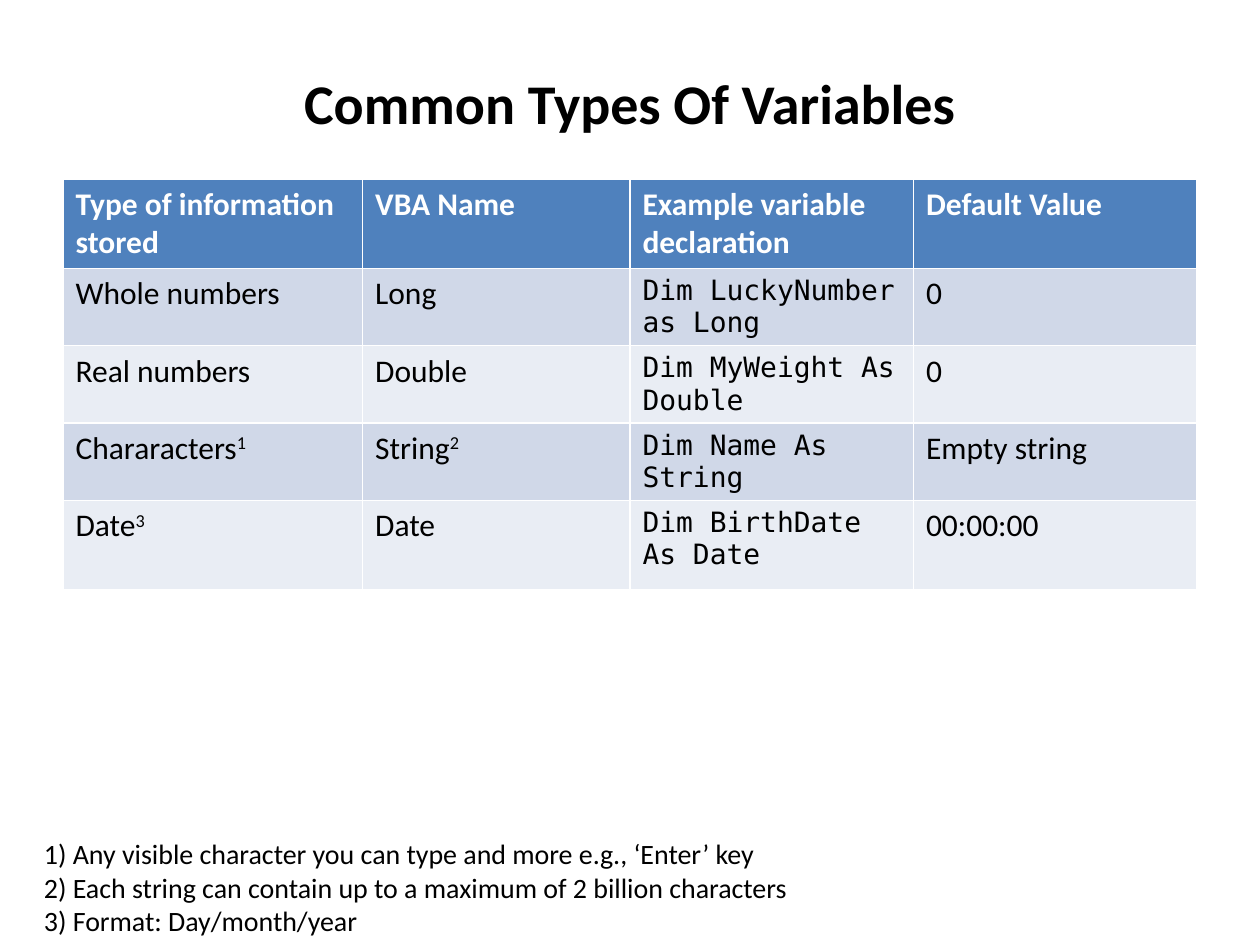
from pptx import Presentation
from pptx.dml.color import RGBColor
from pptx.enum.text import MSO_ANCHOR, PP_ALIGN
from pptx.util import Pt

TITLE = "Common Types Of Variables"
HEADERS = ["Type of information stored", "VBA Name",
           "Example variable declaration", "Default Value"]
VARIABLES = [
    ["Whole numbers", "Long", "Dim LuckyNumber as Long", "0"],
    ["Real numbers", "Double", "Dim MyWeight As Double", "0"],
    ["Chararacters^1", "String^2", "Dim Name As String", "Empty string"],
    ["Date^3", "Date", "Dim BirthDate As Date", "00:00:00"],
]
FOOTNOTES = [
    "1) Any visible character you can type and more e.g., ‘Enter’ key",
    "2) Each string can contain up to a maximum of 2 billion characters",
    "3) Format: Day/month/year",
]
COLUMN_WIDTHS = [171.2, 152.8, 162, 162]
ROW_HEIGHTS = [50.4, 44.2, 44.2, 44.2, 51]
BAND_FILLS = ["E9EDF4", "D0D8E8"]
HEADER_FILL = "4F81BD"
CODE_COLUMN = 2
BODY_FONT, CODE_FONT = "Calibri", "DejaVu Sans Mono"


def color(value):
    return RGBColor.from_string(value)


def format_runs(paragraph, size, name=BODY_FONT, value="000000", bold=False):
    for run in paragraph.runs:
        run.font.size = Pt(size)
        run.font.name = name
        run.font.bold = bold
        run.font.color.rgb = color(value)


def write_with_superscript(paragraph, text):
    base, _, mark = text.partition("^")
    paragraph.text = base
    if mark:
        run = paragraph.add_run()
        run.text = mark
        run._r.get_or_add_rPr().set("baseline", "30000")


def add_title(slide):
    title = slide.shapes.title
    title.left, title.top, title.width, title.height = Pt(36), Pt(21.6), Pt(648), Pt(74)
    title.text_frame.text = TITLE
    title.text_frame.vertical_anchor = MSO_ANCHOR.MIDDLE
    paragraph = title.text_frame.paragraphs[0]
    paragraph.alignment = PP_ALIGN.CENTER
    format_runs(paragraph, 32, bold=True)


def add_variable_table(slide):
    rows = [HEADERS] + VARIABLES
    table = slide.shapes.add_table(
        len(rows), len(HEADERS), Pt(36), Pt(102.2),
        Pt(sum(COLUMN_WIDTHS)), Pt(sum(ROW_HEIGHTS))).table
    for column, width in zip(table.columns, COLUMN_WIDTHS):
        column.width = Pt(width)
    for row, height in zip(table.rows, ROW_HEIGHTS):
        row.height = Pt(height)
    for row_index, texts in enumerate(rows):
        for column_index, text in enumerate(texts):
            cell = table.cell(row_index, column_index)
            cell.fill.solid()
            paragraph = cell.text_frame.paragraphs[0]
            write_with_superscript(paragraph, text)
            if row_index == 0:
                cell.fill.fore_color.rgb = color(HEADER_FILL)
                format_runs(paragraph, 18, value="FFFFFF", bold=True)
                continue
            cell.fill.fore_color.rgb = color(BAND_FILLS[row_index % 2])
            if column_index == CODE_COLUMN:
                format_runs(paragraph, 16, CODE_FONT)
            else:
                format_runs(paragraph, 18)


def add_footnotes(slide):
    box = slide.shapes.add_textbox(Pt(18), Pt(474.5), Pt(708), Pt(65.5))
    box.text_frame.word_wrap = True
    box.text_frame.text = "\n".join(FOOTNOTES)
    for paragraph in box.text_frame.paragraphs:
        format_runs(paragraph, 16)


def main():
    presentation = Presentation()
    presentation.slide_width, presentation.slide_height = Pt(720), Pt(540)
    slide = presentation.slides.add_slide(presentation.slide_layouts[5])
    add_title(slide)
    add_variable_table(slide)
    add_footnotes(slide)
    presentation.save("out.pptx")


if __name__ == "__main__":
    main()
